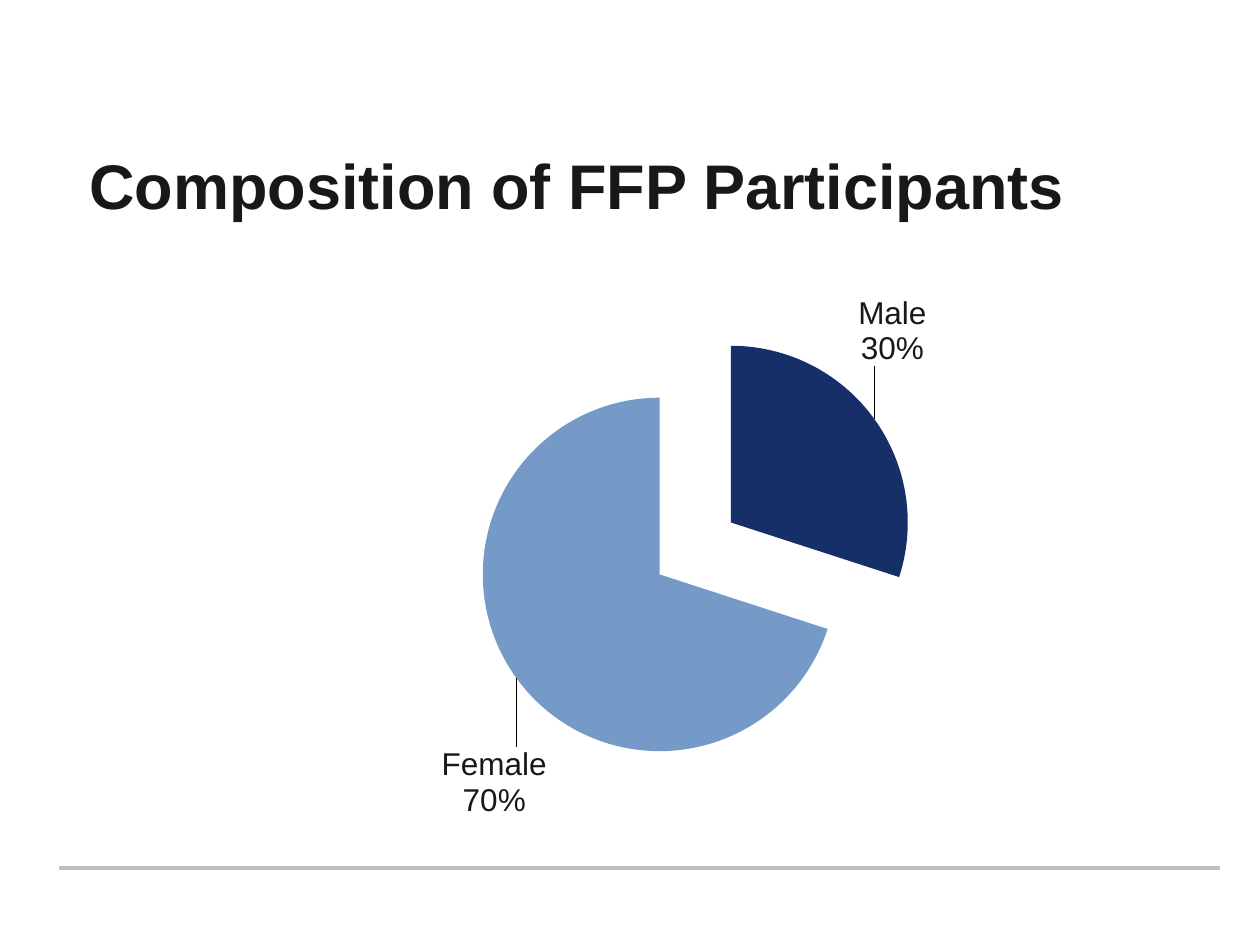
import pptx
import pptx.chart.data
import pptx.dml.color
import pptx.enum.chart
import pptx.enum.shapes
import pptx.enum.text
import pptx.oxml
import pptx.oxml.ns
import pptx.util
from pptx.util import Inches

RGBColor = pptx.dml.color.RGBColor
INK = RGBColor(0x1A, 0x17, 0x18)
RULE = RGBColor(0xBF, 0xBF, 0xBF)
NAVY = RGBColor(0x17, 0x2F, 0x68)
BLUE = RGBColor(0x76, 0x9A, 0xC7)
FONT = "Arial"

# Category, share, colour, label shift as a fraction of the chart
SLICES = [
    ("Male", 30, NAVY, (-0.03, -0.09)),
    ("Female", 70, BLUE, (0.05, 0.12)),
]


def set_font(font, size, bold=False, color=INK):
    font.name = FONT
    font.size = pptx.util.Pt(size)
    font.bold = bold
    font.color.rgb = color


def add_text(s, text, left, top, width, height, size, bold=False):
    box = s.shapes.add_textbox(Inches(left), Inches(top), Inches(width), Inches(height))
    tf = box.text_frame
    tf.word_wrap = True
    tf.vertical_anchor = pptx.enum.text.MSO_ANCHOR.MIDDLE
    tf.margin_left = tf.margin_right = tf.margin_top = tf.margin_bottom = 0
    r = tf.paragraphs[0].add_run()
    r.text = text
    set_font(r.font, size, bold)


def add_rule(s, x1, x2, y):
    line = s.shapes.add_connector(pptx.enum.shapes.MSO_CONNECTOR.STRAIGHT,
                                  Inches(x1), Inches(y), Inches(x2), Inches(y))
    line.line.color.rgb = RULE
    line.line.width = pptx.util.Pt(2.25)
    props = line._element.spPr
    props.append(props.makeelement(pptx.oxml.ns.qn("a:effectLst"), {}))


def chart_xml(body):
    return pptx.oxml.parse_xml(
        f'<c:layout {pptx.oxml.ns.nsdecls("c")}><c:manualLayout>{body}</c:manualLayout></c:layout>')


def position_xml(**values):
    return "".join(f'<c:{tag} val="{value}"/>' for tag, value in values.items())


def set_label_content(labels):
    """Show category and percentage on separate lines."""
    qn = pptx.oxml.ns.qn
    for tag, value in (("showVal", "0"), ("showCatName", "1"), ("showPercent", "1")):
        labels.find(qn("c:" + tag)).set("val", value)
    separator = labels.makeelement(qn("c:separator"), {})
    separator.text = "\n"
    last = labels.find(qn("c:showBubbleSize"))
    if last is None:
        last = labels.find(qn("c:showPercent"))
    last.addnext(separator)


def add_pie(s, left, top, width, height):
    data = pptx.chart.data.CategoryChartData()
    data.categories = [name for name, *_ in SLICES]
    data.add_series("Series 1", [share for _, share, *_ in SLICES])
    chart = s.shapes.add_chart(pptx.enum.chart.XL_CHART_TYPE.PIE, Inches(left), Inches(top),
                               Inches(width), Inches(height), data).chart
    chart.has_legend = False
    chart.has_title = False
    set_font(chart.font, 18)
    plot = chart.plots[0]
    plot.vary_by_categories = True
    series = plot.series[0]

    # Plot area
    qn = pptx.oxml.ns.qn
    area = chart._chartSpace.find(".//" + qn("c:plotArea"))
    old = area.find(qn("c:layout"))
    if old is not None:
        area.remove(old)
    area.insert(0, chart_xml(position_xml(layoutTarget="inner", xMode="edge", yMode="edge",
                                          x=0.22, y=0.08, w=0.61, h=0.83)))

    # Slices pulled apart
    explosion = pptx.oxml.parse_xml(f'<c:explosion {pptx.oxml.ns.nsdecls("c")} val="25"/>')
    series.format.fill.solid()
    series.format.fill.fore_color.rgb = NAVY
    series._element.find(qn("c:spPr")).addnext(explosion)

    # Slice colours and shifted labels
    set_label_content(series.data_labels._element)
    for i, (_, _, color, (dx, dy)) in enumerate(SLICES):
        point = series.points[i]
        point.format.fill.solid()
        point.format.fill.fore_color.rgb = color
        label = point.data_label
        set_font(label.font, 18)
        label.position = pptx.enum.chart.XL_LABEL_POSITION.OUTSIDE_END
        element = series._element.findall(".//" + qn("c:dLbl"))[i]
        element.find(qn("c:idx")).addnext(chart_xml(position_xml(x=dx, y=dy)))
        set_label_content(element)


def main():
    prs = pptx.Presentation()
    prs.slide_width, prs.slide_height = Inches(10), Inches(7.5)
    s = prs.slides.add_slide(prs.slide_layouts[6])
    add_rule(s, 0.47, 9.68, 6.89)
    add_text(s, "Composition of FFP Participants", 0.71, 1.06, 8.87, 0.8, size=36, bold=True)
    add_pie(s, 2.5, 2.25, 5.75, 4.25)
    prs.save("out.pptx")


if __name__ == "__main__":
    main()
